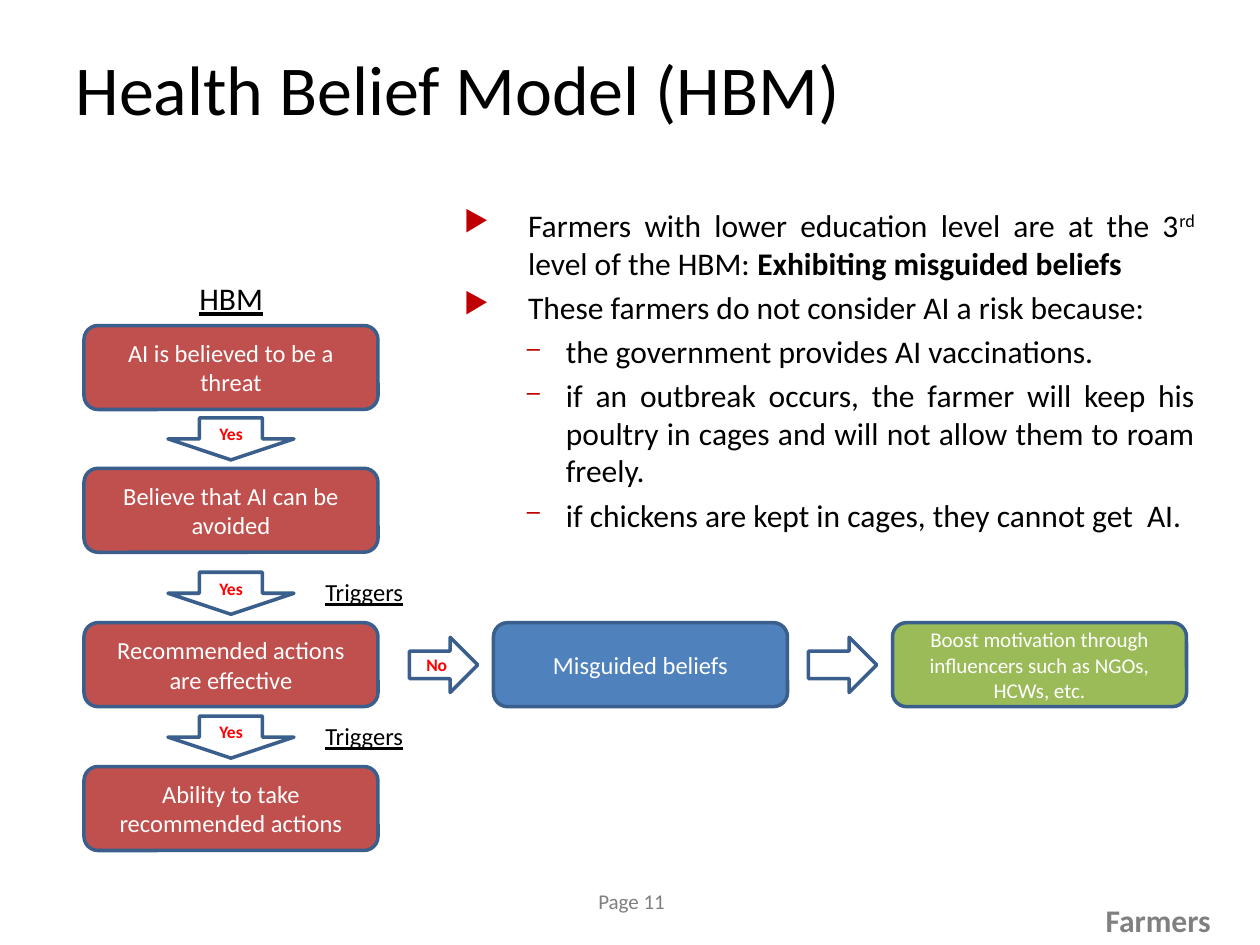
from lxml.etree import SubElement
from pptx import Presentation
from pptx.dml.color import RGBColor
from pptx.enum.shapes import MSO_SHAPE
from pptx.enum.text import MSO_ANCHOR, PP_ALIGN
from pptx.oxml.ns import qn
from pptx.util import Inches, Pt

BLACK = RGBColor(0, 0, 0)
WHITE = RGBColor(255, 255, 255)
RED = RGBColor(0xFF, 0, 0)
MARK = RGBColor(0xC0, 0, 0)
BRICK = RGBColor(0xC0, 0x50, 0x4D)
BLUE = RGBColor(0x4F, 0x81, 0xBD)
GREEN = RGBColor(0x9B, 0xBB, 0x59)
EDGE = RGBColor(0x3A, 0x5F, 0x8C)
GRAY = RGBColor(0x7F, 0x7F, 0x7F)
SILVER = RGBColor(0x80, 0x80, 0x80)

COLS, ROWS = 120, 90
BOX = 28, 8
DOWN = 12, 4
RIGHT = 6.5, 5.25
STEPS = [
    (31, "AI is believed to be a threat"),
    (44.6, "Believe that AI can be avoided"),
    (59.3, "Recommended actions are effective"),
    (73, "Ability to take recommended actions"),
]
POINTS = [
    (0, [("Farmers with lower education level are at the 3", ""), ("rd", "super"),
         (" level of the HBM: ", ""), ("Exhibiting misguided beliefs", "bold")]),
    (0, [("These farmers do not consider AI a risk because:", "")]),
    (1, [("the government provides AI vaccinations.", "")]),
    (1, [("if an outbreak occurs, the farmer will keep his poultry in cages "
          "and will not allow them to roam freely. ", "")]),
    (1, [("if chickens are kept in cages, they cannot get  AI.", "")]),
]
BULLETS = [("▶", 90, 0.51, 0.51), ("–", 75, 0.81, 0.31)]


class Deck:
    face = "Calibri"

    def __init__(self):
        self.show = Presentation()
        self.show.slide_width, self.show.slide_height = Inches(10), Inches(7.5)
        self.slide = self.show.slides.add_slide(self.show.slide_layouts[5])

    def area(self, col, row, wide, high):
        across = self.show.slide_width / COLS
        down = self.show.slide_height / ROWS
        return [round(n) for n in (col * across, row * down, wide * across, high * down)]

    def style(self, para, size, color, bold=False, line=False):
        font = para.font
        font.name, font.size, font.bold, font.underline = self.face, Pt(size), bold, line
        font.color.rgb = color

    def title(self, text, *area):
        shape = self.slide.shapes.title
        shape.left, shape.top, shape.width, shape.height = self.area(*area)
        frame = shape.text_frame
        frame.text = text
        frame.vertical_anchor = MSO_ANCHOR.MIDDLE
        frame.paragraphs[0].alignment = PP_ALIGN.LEFT
        self.style(frame.paragraphs[0], 40, BLACK)

    def label(self, text, area, size, color=BLACK, align=PP_ALIGN.LEFT, **look):
        frame = self.slide.shapes.add_textbox(*self.area(*area)).text_frame
        frame.word_wrap = False
        frame.text = text
        frame.paragraphs[0].alignment = align
        self.style(frame.paragraphs[0], size, color, **look)

    def shape(self, kind, area, fill):
        shape = self.slide.shapes.add_shape(kind, *self.area(*area))
        shape.shadow.inherit = False
        if fill is None:
            shape.fill.background()
        else:
            shape.fill.solid()
            shape.fill.fore_color.rgb = fill
        shape.line.color.rgb = EDGE
        shape.line.width = Pt(2)
        return shape.text_frame

    def center(self, frame, text, size, color, bold=False):
        frame.word_wrap = True
        frame.vertical_anchor = MSO_ANCHOR.MIDDLE
        frame.text = text
        frame.paragraphs[0].alignment = PP_ALIGN.CENTER
        self.style(frame.paragraphs[0], size, color, bold)

    def box(self, text, col, row, fill, size=14):
        frame = self.shape(MSO_SHAPE.ROUNDED_RECTANGLE, (col, row, *BOX), fill)
        self.center(frame, text, size, WHITE)

    def arrow(self, kind, area, fill=None, text=""):
        frame = self.shape(kind, area, fill)
        frame.margin_left = frame.margin_right = 0
        frame.margin_top = frame.margin_bottom = 0
        if text:
            self.center(frame, text, 10, RED, True)

    def bullet(self, para, level):
        sign, scale, left, hang = BULLETS[level]
        para.level = level
        para.alignment = PP_ALIGN.JUSTIFY
        para.space_before = Pt(3.6)
        props = para._p.get_or_add_pPr()
        props.set("marL", str(Inches(left)))
        props.set("indent", str(-Inches(hang)))
        tint = SubElement(props, qn("a:buClr"))
        SubElement(tint, qn("a:srgbClr"), val=str(MARK))
        SubElement(props, qn("a:buSzPct"), val=str(scale * 1000))
        SubElement(props, qn("a:buChar"), char=sign)

    def points(self, items, *area):
        frame = self.slide.shapes.add_textbox(*self.area(*area)).text_frame
        frame.word_wrap = True
        for index, (level, parts) in enumerate(items):
            para = frame.add_paragraph() if index else frame.paragraphs[0]
            self.bullet(para, level)
            self.style(para, 18, BLACK)
            for text, look in parts:
                run = para.add_run()
                run.text = text
                if look == "bold":
                    run.font.bold = True
                elif look == "super":
                    run.font._element.set("baseline", "30000")


def main():
    deck = Deck()
    deck.title("Health Belief Model (HBM)", 6, 3.6, 108, 9.4)
    deck.points(POINTS, 43, 19, 72, 32)
    deck.label("HBM", (17.8, 26, 8.5, 4.8), 18, line=True)

    for index, (row, text) in enumerate(STEPS):
        deck.box(text, 8, row, BRICK)
        if index:
            deck.arrow(MSO_SHAPE.DOWN_ARROW, (16, row - 4.8, *DOWN), text="Yes")
        if index > 1:
            deck.label("Triggers", (29.8, row - 4.9, 10, 4), 14, line=True)

    row = STEPS[2][0]
    for col, text in (39, "No"), (77, ""):
        deck.arrow(MSO_SHAPE.RIGHT_ARROW, (col, row + 1.4, *RIGHT), WHITE, text)
    deck.box("Misguided beliefs", 47, row, BLUE)
    deck.box("Boost motivation through influencers such as NGOs, HCWs, etc.",
             85, row, GREEN, 12)

    deck.label("Page 11", (55.8, 84, 9.2, 3.6), 12, GRAY)
    deck.label("Farmers", (104, 85.2, 12.5, 4.8), 18, SILVER, PP_ALIGN.RIGHT, bold=True)
    deck.show.save("out.pptx")


if __name__ == "__main__":
    main()
